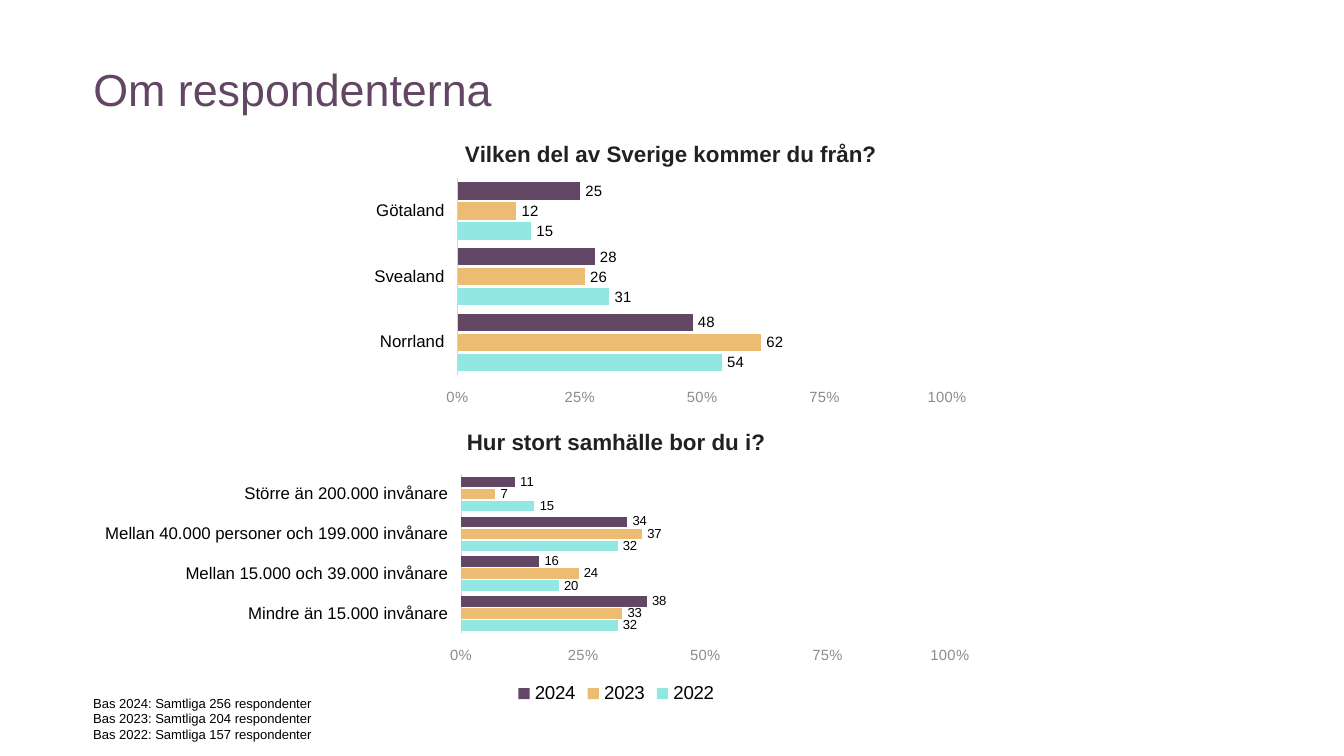
from lxml.etree import SubElement
from pptx import Presentation
from pptx.chart.data import CategoryChartData
from pptx.dml.color import RGBColor
from pptx.enum.chart import (XL_CHART_TYPE as ChartType, XL_LABEL_POSITION as LabelPos,
                             XL_LEGEND_POSITION as LegendPos, XL_TICK_LABEL_POSITION as TickPos,
                             XL_TICK_MARK as Tick)
from pptx.enum.text import MSO_ANCHOR as Anchor, MSO_AUTO_SIZE as AutoSize, PP_ALIGN as Align
from pptx.oxml.ns import qn
from pptx.util import Inches, Pt

HEADING = "Om respondenterna"
BASES = [(2024, 256), (2023, 204), (2022, 157)]
HEADING_AREA = (6.94, 8.18, 85.8, 8.18)
BASES_AREA = (6.94, 91.95, 18, 5.51)
QUESTIONS = [
    dict(
        title="Vilken del av Sverige kommer du från?",
        answers=["Norrland", "Svealand", "Götaland"],
        shares={"Series 1": (54, 31, 15), "Series 2": (62, 26, 12), "Series 3": (48, 28, 25)},
        area=(26.92, 16.36, 46, 38.04), plot=(15.5, 19, 79.2, 68.5),
        label_size=8, legend=False,
    ),
    dict(
        title="Hur stort samhälle bor du i?",
        answers=["Mindre än 15.000 invånare", "Mellan 15.000 och 39.000 invånare",
                 "Mellan 40.000 personer och 199.000 invånare", "Större än 200.000 invånare"],
        shares={"2022": (32, 20, 32, 15), "2023": (33, 24, 37, 7), "2024": (38, 16, 34, 11)},
        area=(7.4, 54.4, 76.9, 39.47), plot=(35, 21.1, 47.3, 53.4),
        label_size=7, legend=True,
    ),
]
THEME = dict(
    font="Arial",
    years=("92E7E2", "EBBC71", "624764"),
    heading=(24, "624764"), question=(12, "212121"), chart=(10, "212121"),
    answer=(9, "000000"), percent=(7.9, "8C8C8C"), legend=(10, "000000"),
    note=(7, "000000"), label="000000", axis_line="D1D1D1",
)

deck = Presentation()
deck.slide_width = Inches(10)
deck.slide_height = deck.slide_width * 9 // 16


def place(area):
    sides = (deck.slide_width, deck.slide_height) * 2
    return [round(side * share / 100) for side, share in zip(sides, area)]


def style(font, size, color, bold=False):
    values = dict(name=THEME["font"], size=Pt(size), bold=bold)
    for key, value in values.items():
        setattr(font, key, value)
    font.color.rgb = RGBColor.from_string(color)


def format_frame(frame):
    values = dict(margin_left=0, margin_top=0, margin_right=0, margin_bottom=0,
                  word_wrap=True, auto_size=AutoSize.NONE, vertical_anchor=Anchor.TOP)
    for key, value in values.items():
        setattr(frame, key, value)


def fix_plot(chart, shares):
    area = chart._chartSpace.chart.plotArea
    for old in area.findall(qn("c:layout")):
        area.remove(old)
    layout = SubElement(area, qn("c:layout"))
    area.insert(0, layout)
    manual = SubElement(layout, qn("c:manualLayout"))
    settings = [("layoutTarget", "inner"), ("xMode", "edge"), ("yMode", "edge")]
    settings += [(side, share / 100) for side, share in zip("xywh", shares)]
    for tag, value in settings:
        SubElement(manual, qn(f"c:{tag}")).set("val", str(value))


def format_axes(chart):
    answers, percents = chart.category_axis, chart.value_axis
    common = dict(has_major_gridlines=False, major_tick_mark=Tick.NONE,
                  minor_tick_mark=Tick.NONE, tick_label_position=TickPos.LOW)
    scale = dict(minimum_scale=0, maximum_scale=100, major_unit=25)
    for axis, values in ((answers, common), (percents, common | scale)):
        for key, value in values.items():
            setattr(axis, key, value)
    style(answers.tick_labels.font, *THEME["answer"])
    style(percents.tick_labels.font, *THEME["percent"])
    percents.tick_labels.number_format = "General\\%"
    percents.tick_labels.number_format_is_linked = False
    answers.format.line.color.rgb = RGBColor.from_string(THEME["axis_line"])
    answers.format.line.width = Pt(0.75)
    percents.format.line.fill.background()


def format_bars(plot, label_size):
    plot.gap_width, plot.overlap, plot.vary_by_categories = 50, -16, False
    plot.has_data_labels = True
    labels = plot.data_labels
    labels.show_value, labels.position = True, LabelPos.OUTSIDE_END
    style(labels.font, label_size, THEME["label"])
    for year, color in zip(plot.series, THEME["years"]):
        year.format.fill.solid()
        year.format.fill.fore_color.rgb = RGBColor.from_string(color)


def add_question(slide, question):
    data = CategoryChartData()
    data.categories = question["answers"]
    for year, shares in question["shares"].items():
        data.add_series(year, shares)
    chart = slide.shapes.add_chart(ChartType.BAR_CLUSTERED, *place(question["area"]), data).chart
    style(chart.font, *THEME["chart"])
    chart.has_title = True
    title = chart.chart_title
    title.include_in_layout = False
    title.text_frame.text = question["title"]
    style(title.text_frame.paragraphs[0].runs[0].font, *THEME["question"], bold=True)
    format_axes(chart)
    format_bars(chart.plots[0], question["label_size"])
    fix_plot(chart, question["plot"])
    chart.has_legend = question["legend"]
    if chart.has_legend:
        chart.legend.position = LegendPos.BOTTOM
        chart.legend.include_in_layout = False
        style(chart.legend.font, *THEME["legend"])


slide = deck.slides.add_slide(deck.slide_layouts[5])
heading = slide.shapes.title
heading.left, heading.top, heading.width, heading.height = place(HEADING_AREA)
heading.text_frame.text = HEADING
bases = slide.shapes.add_textbox(*place(BASES_AREA))
bases.text_frame.text = "\n".join(
    f"Bas {year}: Samtliga {count} respondenter" for year, count in BASES)
for box, role in ((heading, "heading"), (bases, "note")):
    format_frame(box.text_frame)
    for paragraph in box.text_frame.paragraphs:
        paragraph.alignment = Align.LEFT
        style(paragraph.font, *THEME[role])

for question in QUESTIONS:
    add_question(slide, question)

deck.save("out.pptx")
